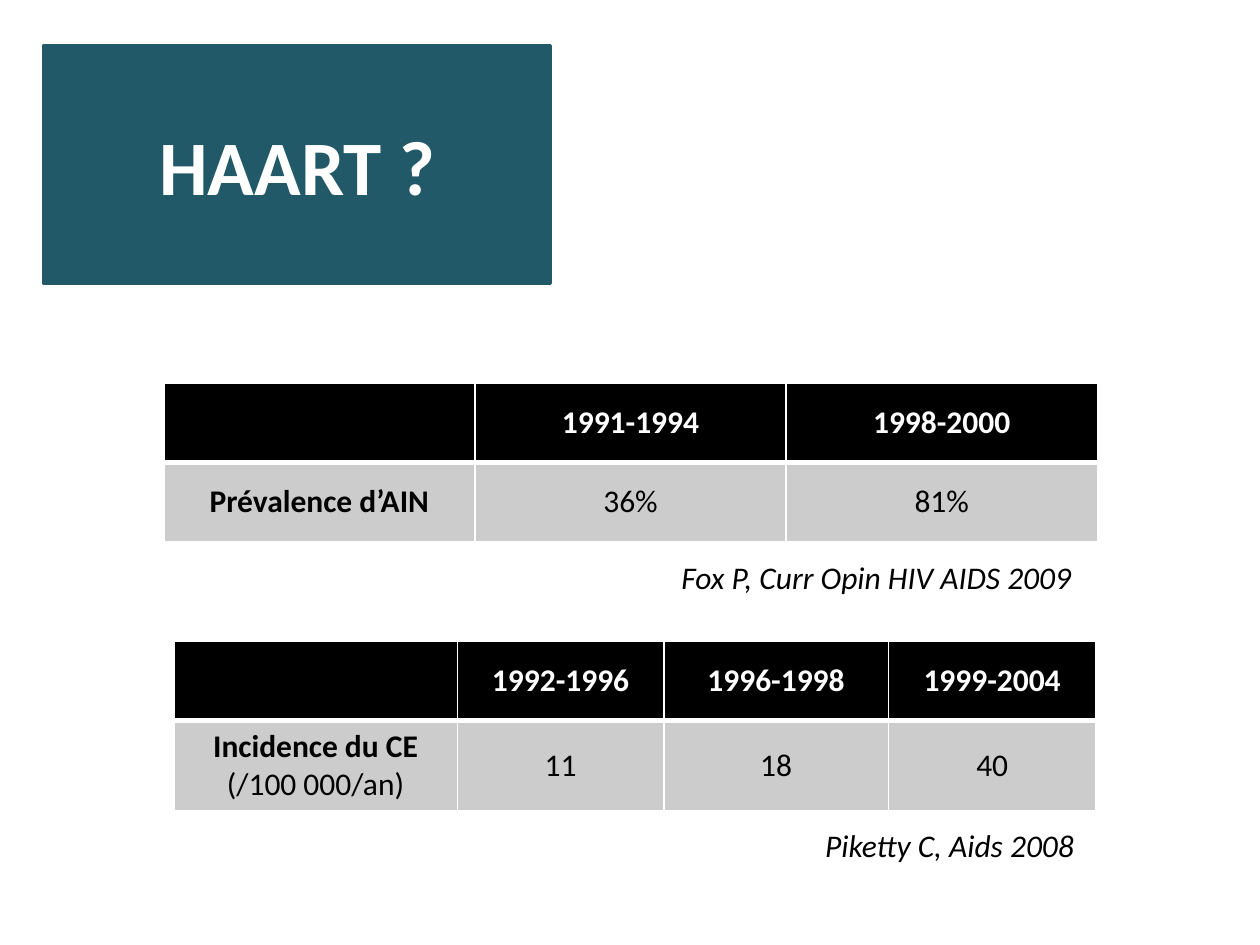
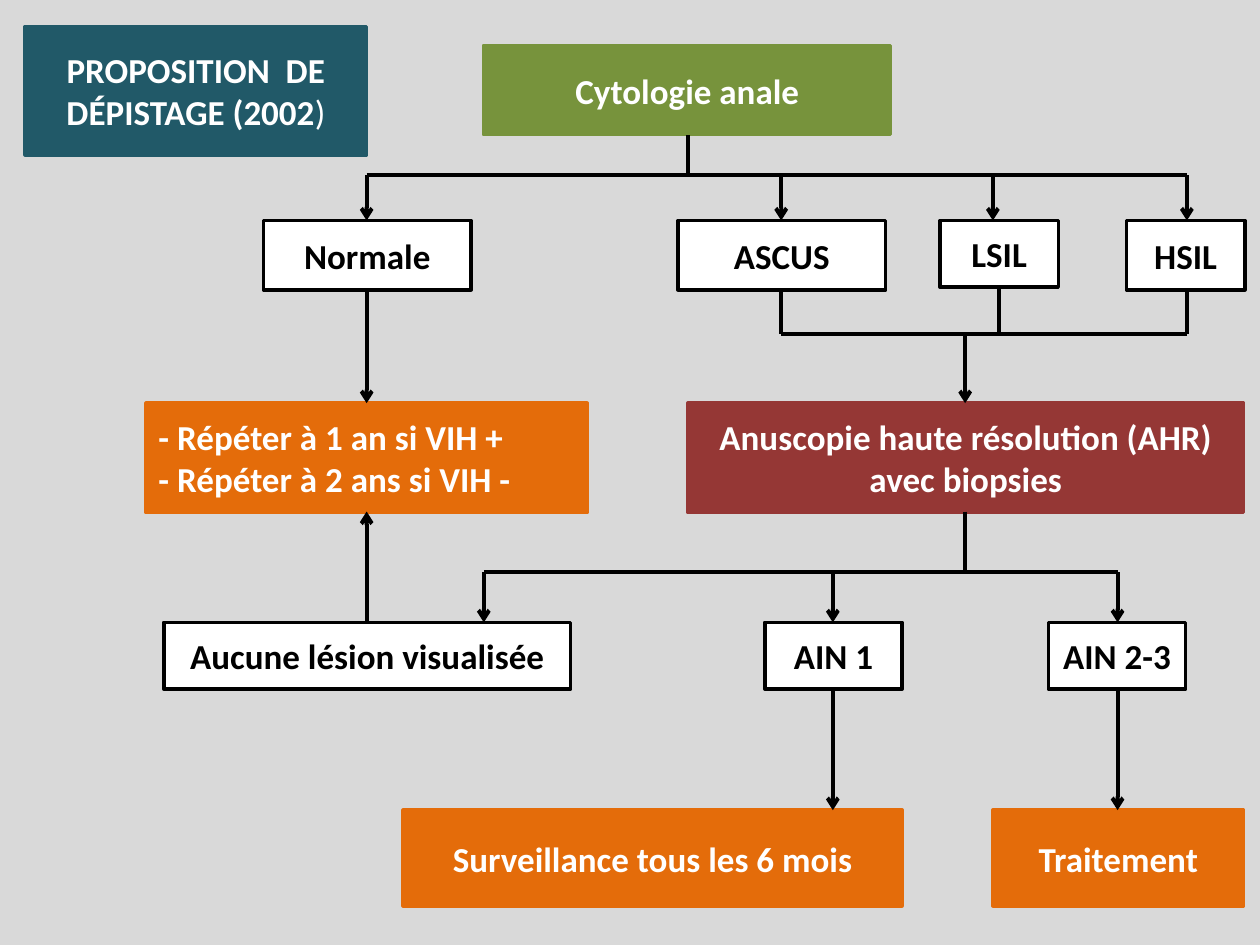
from lxml import etree
from pptx import Presentation
from pptx.dml.color import RGBColor
from pptx.enum import shapes, text
from pptx.oxml import ns
from pptx.util import Inches, Pt

FONT = "Calibri"
BLACK = RGBColor(0x00, 0x00, 0x00)
WHITE = RGBColor(0xFF, 0xFF, 0xFF)
LIGHT_GREY = RGBColor(0xCC, 0xCC, 0xCC)
PAGE_GREY = RGBColor(0xD9, 0xD9, 0xD9)
TEAL = RGBColor(0x21, 0x59, 0x68)
GREEN = RGBColor(0x77, 0x93, 0x3C)
RED = RGBColor(0x95, 0x37, 0x35)
ORANGE = RGBColor(0xE4, 0x6C, 0x0A)

LEFT, CENTER = text.PP_ALIGN.LEFT, text.PP_ALIGN.CENTER
TITLE_ONLY = 5


# Shared helpers
def add_span(para, words, size, color, bold=False, italic=False):
    span = para.add_run()
    span.text = words
    font = span.font
    font.name, font.size = FONT, Pt(size)
    font.bold, font.italic = bold, italic
    font.color.rgb = color


def paint(shape, fill, line):
    shape.fill.solid()
    shape.fill.fore_color.rgb = fill
    shape.line.color.rgb = line
    shape.line.width = Pt(2)


def add_page(deck, background, title_place, title_size, title_spans):
    """Add a slide whose title sits in a rounded teal band."""
    page = deck.slides.add_slide(deck.slide_layouts[TITLE_ONLY])
    page.background.fill.solid()
    page.background.fill.fore_color.rgb = background

    title = page.shapes.title
    title.left, title.top, title.width, title.height = map(Inches, title_place)
    outline = etree.SubElement(title._element.spPr, ns.qn("a:prstGeom"), prst="roundRect")
    etree.SubElement(outline, ns.qn("a:avLst"))
    paint(title, TEAL, TEAL)
    frame = title.text_frame
    frame.word_wrap = True
    frame.auto_size = text.MSO_AUTO_SIZE.NONE
    frame.vertical_anchor = text.MSO_ANCHOR.MIDDLE
    para = frame.paragraphs[0]
    para.alignment = CENTER
    for words, bold in title_spans:
        add_span(para, words, title_size, WHITE, bold)
    return page


# Tables and their sources
def set_borders(cell, widths):
    """Draw white cell borders; widths are in points, by side."""
    properties = cell._tc.get_or_add_tcPr()
    for position, side in enumerate("LRTB"):
        line = etree.Element(ns.qn(f"a:ln{side}"), w=str(Pt(widths[side])))
        fill = etree.SubElement(line, ns.qn("a:solidFill"))
        etree.SubElement(fill, ns.qn("a:srgbClr"), val=str(WHITE))
        properties.insert(position, line)


def add_data_table(page, left, top, column_widths, row_heights, rows):
    """Each cell is a list of (words, bold) spans."""
    table = page.shapes.add_table(
        len(rows), len(column_widths), Inches(left), Inches(top),
        Inches(sum(column_widths)), Inches(sum(row_heights))).table
    for column, width in zip(table.columns, column_widths):
        column.width = Inches(width)
    for row, height in zip(table.rows, row_heights):
        row.height = Inches(height)
    for row_index, row in enumerate(rows):
        header = row_index == 0
        for column_index, spans in enumerate(row):
            cell = table.cell(row_index, column_index)
            cell.fill.solid()
            cell.fill.fore_color.rgb = BLACK if header else LIGHT_GREY
            cell.vertical_anchor = text.MSO_ANCHOR.MIDDLE
            set_borders(cell, {"L": 1, "R": 1,
                               "T": 1 if header else 3, "B": 3 if header else 1})
            para = cell.text_frame.paragraphs[0]
            para.alignment = CENTER
            for words, bold in spans:
                add_span(para, words, 18, WHITE if header else BLACK, bold)


def add_reference(page, left, top, width, words):
    box = page.shapes.add_textbox(Inches(left), Inches(top), Inches(width), Inches(0.4))
    box.text_frame.word_wrap = False
    add_span(box.text_frame.paragraphs[0], words, 18, BLACK, italic=True)


# Flowchart parts
def add_box(page, place, lines, fill=WHITE, align=CENTER):
    box = page.shapes.add_shape(shapes.MSO_SHAPE.RECTANGLE, *map(Inches, place))
    box.shadow.inherit = False
    plain = fill == WHITE
    paint(box, fill, BLACK if plain else fill)
    frame = box.text_frame
    frame.word_wrap = True
    frame.vertical_anchor = text.MSO_ANCHOR.MIDDLE
    for index, words in enumerate(lines):
        para = frame.add_paragraph() if index else frame.paragraphs[0]
        para.alignment = align
        add_span(para, words, 20, BLACK if plain else WHITE, bold=True)


def add_link(page, start, end, arrow=False):
    link = page.shapes.add_connector(
        shapes.MSO_CONNECTOR.STRAIGHT, *map(Inches, (*start, *end)))
    link.line.color.rgb = BLACK
    link.line.width = Pt(2.25)
    if arrow:
        etree.SubElement(link.line._get_or_add_ln(), ns.qn("a:tailEnd"), type="arrow")
    etree.SubElement(link._element.spPr, ns.qn("a:effectLst"))


def add_rail(page, y, columns):
    add_link(page, (min(columns), y), (max(columns), y))


def add_drops(page, columns, start, end, arrow=False):
    for x in columns:
        add_link(page, (x, start), (x, end), arrow)


# Slides
def build_haart(deck):
    page = add_page(deck, WHITE, (0.35, 0.36, 4.02, 1.89), 44, [("HAART ?", True)])
    add_data_table(page, 1.3, 3.04, [2.47] * 3, [0.63, 0.63], [
        [[], [("1991-1994", True)], [("1998-2000", True)]],
        [[("Prévalence d’AIN", True)], [("36%", False)], [("81%", False)]],
    ])
    add_data_table(page, 1.38, 5.09, [2.25, 1.64, 1.78, 1.65], [0.63, 0.7], [
        [[], [("1992-1996", True)], [("1996-1998", True)], [("1999-2004", True)]],
        [[("Incidence du CE ", True), ("(/100 000/an)", False)],
         [("11", False)], [("18", False)], [("40", False)]],
    ])
    add_reference(page, 5.31, 4.38, 3.35, "Fox P, Curr Opin HIV AIDS 2009")
    add_reference(page, 6.45, 6.51, 2.22, "Piketty C, Aids 2008")


def build_screening(deck):
    page = add_page(deck, PAGE_GREY, (0.2, 0.21, 2.71, 1.02), 20,
                    [("PROPOSITION  DE DÉPISTAGE (2002", True), (")", False)])

    # Tops of the rows and centres of the columns
    result, action, lesion, outcome = 1.75, 3.2, 4.94, 6.43
    normal, ascus, lsil, hsil = 2.91, 6.2, 7.88, 9.42
    no_lesion, ain_1, ain_2_3 = 3.84, 6.61, 8.87
    cytology, anuscopy = 5.46, 7.66

    # Boxes
    add_box(page, (3.84, 0.36, 3.23, 0.71), ["Cytologie anale"], GREEN)
    for words, left, width, height in (("Normale", 2.09, 1.65, 0.55),
                                       ("ASCUS", 5.38, 1.65, 0.55),
                                       ("LSIL", 7.46, 0.94, 0.53),
                                       ("HSIL", 8.94, 0.94, 0.55)):
        add_box(page, (left, result, width, height), [words])
    add_box(page, (1.16, action, 3.5, 0.87),
            ["- Répéter à 1 an si VIH +", "- Répéter à 2 ans si VIH -"], ORANGE, LEFT)
    add_box(page, (5.46, action, 4.41, 0.87),
            ["Anuscopie haute résolution (AHR) avec biopsies"], RED)
    for words, left, width in (("Aucune lésion visualisée", 1.3, 3.23),
                               ("AIN 1", 6.07, 1.09),
                               ("AIN 2-3", 8.32, 1.09)):
        add_box(page, (left, lesion, width, 0.53), [words])
    for words, left, width in (("Surveillance tous les 6 mois", 3.2, 3.96),
                               ("Traitement", 7.88, 1.99)):
        add_box(page, (left, outcome, width, 0.76), [words], ORANGE)

    # Cytology to its four results
    results = [normal, ascus, lsil, hsil]
    add_drops(page, [cytology], 1.07, 1.39)
    add_rail(page, 1.39, results)
    add_drops(page, results, 1.39, result, arrow=True)

    # Results to the next action
    add_drops(page, [normal], 2.3, action, arrow=True)
    add_drops(page, [ascus, hsil], 2.3, 2.65)
    add_drops(page, [7.93], 2.28, 2.65)
    add_rail(page, 2.65, [ascus, hsil])
    add_drops(page, [anuscopy], 2.65, action, arrow=True)

    # Anuscopy to lesions, then to outcomes
    lesions = [no_lesion, ain_1, ain_2_3]
    add_drops(page, [anuscopy], 4.06, 4.54)
    add_rail(page, 4.54, lesions)
    add_drops(page, lesions, 4.54, lesion, arrow=True)
    add_drops(page, [normal], lesion, 4.06, arrow=True)
    add_drops(page, [ain_1, ain_2_3], 5.47, outcome, arrow=True)


def main():
    deck = Presentation()
    deck.slide_width, deck.slide_height = Inches(10), Inches(7.5)
    build_haart(deck)
    build_screening(deck)
    deck.save("out.pptx")


if __name__ == "__main__":
    main()
